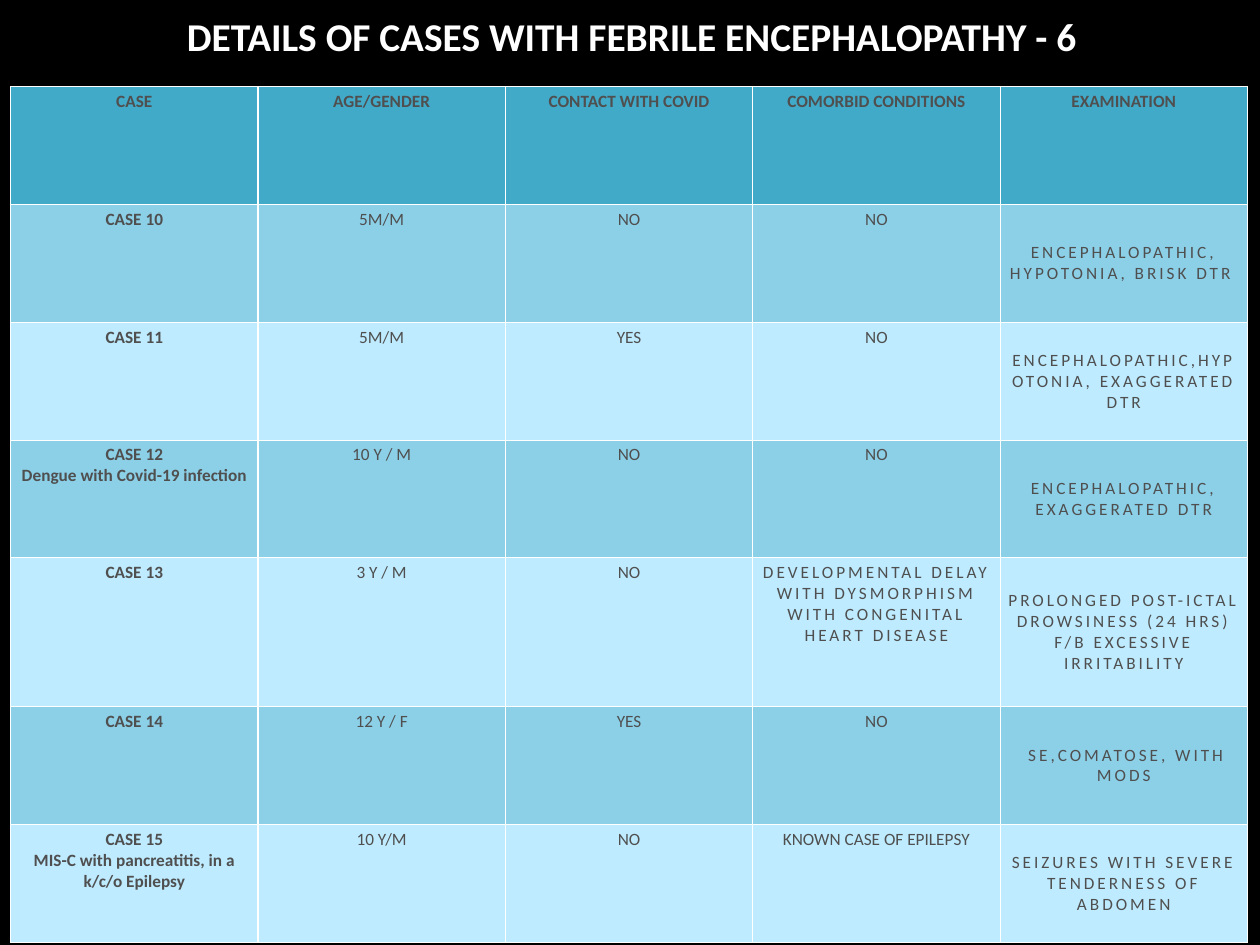
from lxml.etree import SubElement
from pptx import Presentation
from pptx.dml.color import RGBColor
from pptx.enum.text import MSO_ANCHOR, MSO_AUTO_SIZE, PP_ALIGN
from pptx.oxml.ns import qn
from pptx.util import Pt

PX = 9144
BLACK = RGBColor(0x00, 0x00, 0x00)
WHITE = RGBColor(0xFF, 0xFF, 0xFF)
GRAY = RGBColor(0x4F, 0x4F, 0x4F)
TEAL = RGBColor(0x42, 0xAA, 0xC9)
SKY = RGBColor(0x8C, 0xD0, 0xE8)
PALE = RGBColor(0xBE, 0xEB, 0xFF)

ROWS = [
    ["CASE", "AGE/GENDER", "CONTACT WITH COVID", "COMORBID CONDITIONS", "EXAMINATION"],
    ["CASE 10", "5M/M", "NO", "NO", "ENCEPHALOPATHIC, HYPOTONIA, BRISK DTR "],
    ["CASE 11", "5M/M", "YES", "NO", "ENCEPHALOPATHIC,HYPOTONIA, EXAGGERATED DTR"],
    ["CASE 12\nDengue with Covid-19 infection", "10 Y / M", "NO", "NO",
     "ENCEPHALOPATHIC, EXAGGERATED DTR"],
    ["CASE 13", "3 Y / M", "NO",
     "DEVELOPMENTAL DELAY WITH DYSMORPHISM WITH CONGENITAL HEART DISEASE",
     "PROLONGED POST-ICTAL DROWSINESS (24 HRS) F/B EXCESSIVE IRRITABILITY"],
    ["CASE 14", "12 Y / F", "YES", "NO", " SE,COMATOSE, WITH MODS"],
    ["CASE 15\nMIS-C with pancreatitis, in a k/c/o Epilepsy", "10 Y/M", "NO",
     "KNOWN CASE OF EPILEPSY", "SEIZURES WITH SEVERE TENDERNESS OF ABDOMEN"],
]
HEIGHTS = [133, 133, 133, 133, 168, 133, 133]
COMORBID, EXAM = 3, 4
SPACED = {(4, COMORBID)} | {(i, EXAM) for i in range(1, len(ROWS))}


class Deck:
    """Holds the style and the current slide, and adds elements to it."""

    def __init__(self, width, height, font):
        self.prs = Presentation()
        self.prs.slide_width, self.prs.slide_height = width * PX, height * PX
        self.font = font
        self.slide = self.prs.slides.add_slide(self.prs.slide_layouts[5])
        fill = self.slide.background.fill
        fill.solid()
        fill.fore_color.rgb = BLACK

    def text(self, tf, text, size, color, bold, spacing=0):
        for i, line in enumerate(text.split("\n")):
            p = tf.add_paragraph() if i else tf.paragraphs[0]
            p.alignment = PP_ALIGN.CENTER
            r = p.add_run()
            r.text = line
            r.font.name, r.font.size = self.font, Pt(size)
            r.font.bold, r.font.color.rgb = bold, color
            if spacing:
                r._r.get_or_add_rPr().set("spc", str(spacing))

    def inset(self, box):
        box.margin_left = box.margin_right = 6 * PX
        box.margin_top = box.margin_bottom = 6 * PX
        box.vertical_anchor = MSO_ANCHOR.MIDDLE

    def title(self, x, y, w, h, text):
        sp = self.slide.shapes.title
        sp.left, sp.top, sp.width, sp.height = (v * PX for v in (x, y, w, h))
        tf = sp.text_frame
        tf.word_wrap = True
        tf.auto_size = MSO_AUTO_SIZE.NONE
        self.inset(tf)
        self.text(tf, text, 32, WHITE, True)

    def border(self, cell):
        tcPr = cell._tc.get_or_add_tcPr()
        for side in ("a:lnL", "a:lnR", "a:lnT", "a:lnB"):
            ln = SubElement(tcPr, qn(side), w=str(int(Pt(1))))
            fill = SubElement(ln, qn("a:solidFill"))
            SubElement(fill, qn("a:srgbClr"), val=str(WHITE))

    def table(self, x, y, w, rows, heights):
        frame = self.slide.shapes.add_table(
            len(rows), len(rows[0]), x * PX, y * PX, w * PX, sum(heights) * PX)
        tbl = frame.table
        tbl.first_row = tbl.horz_banding = False
        for i, row in enumerate(rows):
            tbl.rows[i].height = heights[i] * PX
            for j, text in enumerate(row):
                cell = tbl.cell(i, j)
                self.border(cell)
                cell.fill.solid()
                cell.fill.fore_color.rgb = TEAL if i == 0 else SKY if i % 2 else PALE
                if i and j == EXAM:
                    self.inset(cell)
                spacing = 240 if (i, j) in SPACED else 0
                self.text(cell.text_frame, text, 14, GRAY, i == 0 or j == 0, spacing)


def main():
    deck = Deck(1422, 1067, "Calibri")
    deck.table(12, 98, 1396, ROWS, HEIGHTS)
    deck.title(19, 8, 1389, 65, "DETAILS OF CASES WITH FEBRILE ENCEPHALOPATHY - 6")
    deck.prs.save("out.pptx")


if __name__ == "__main__":
    main()
